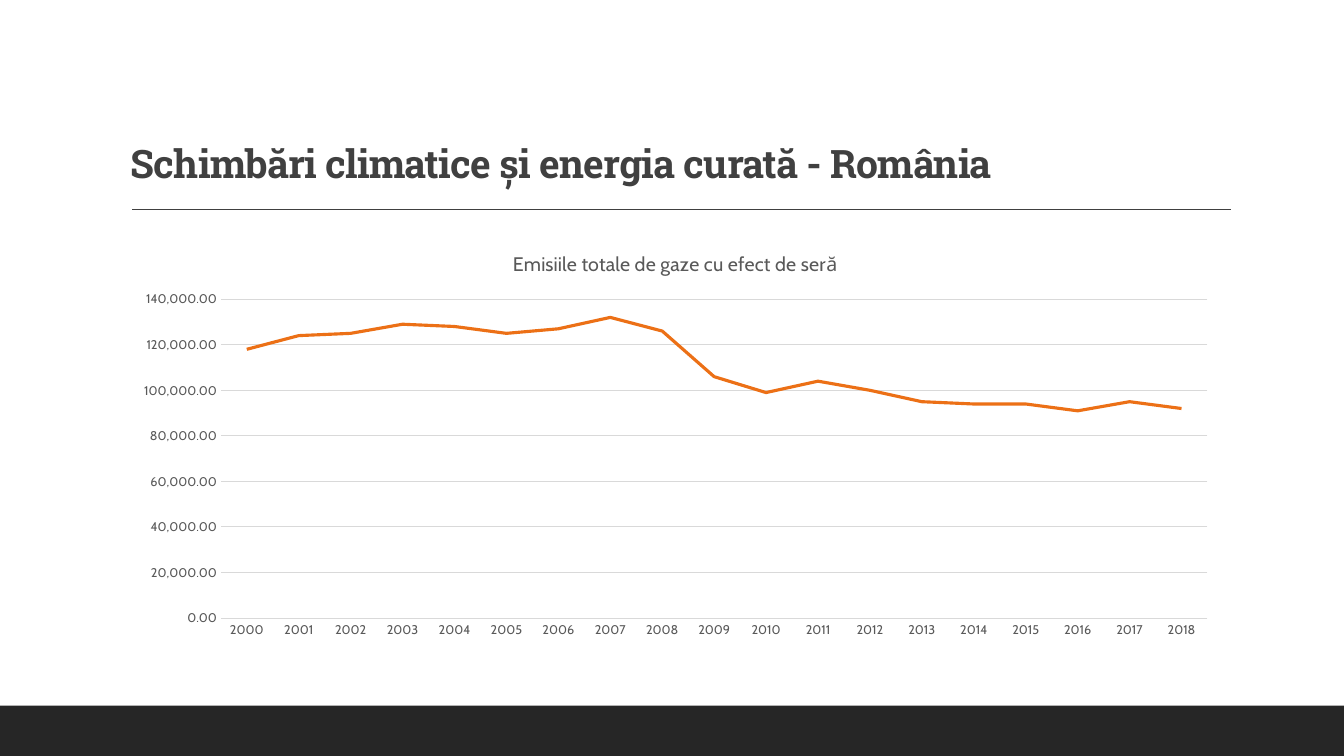
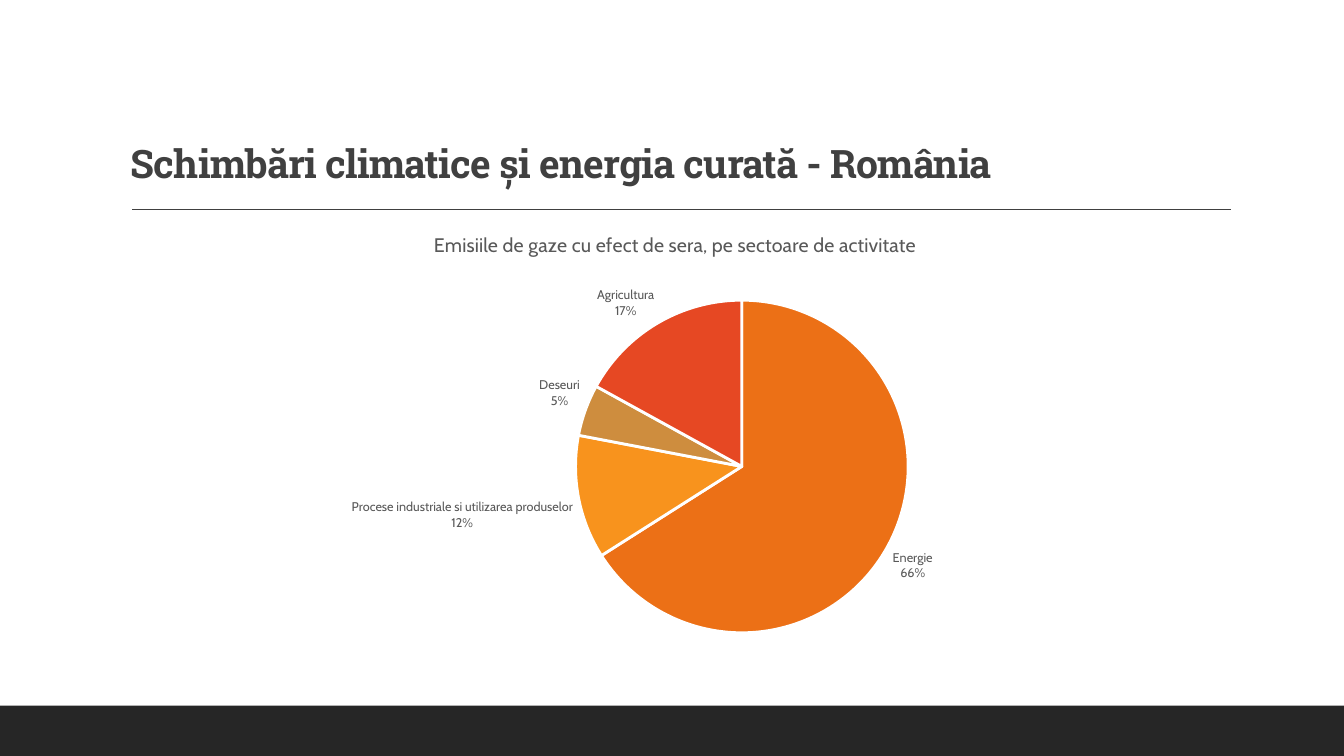
"""Build two slides on greenhouse gas emissions in Romania."""
from lxml import etree
from pptx import Presentation
from pptx.chart.data import CategoryChartData
from pptx.dml.color import RGBColor
from pptx.enum.chart import XL_CHART_TYPE, XL_LABEL_POSITION, XL_TICK_MARK
from pptx.enum.shapes import MSO_CONNECTOR, MSO_SHAPE
from pptx.enum.text import MSO_ANCHOR
from pptx.oxml.ns import qn
from pptx.util import Cm, Pt

LINE = XL_CHART_TYPE.LINE
PIE = XL_CHART_TYPE.PIE
OUTSIDE_END = XL_LABEL_POSITION.OUTSIDE_END
NO_TICK = XL_TICK_MARK.NONE
STRAIGHT = MSO_CONNECTOR.STRAIGHT
RECTANGLE = MSO_SHAPE.RECTANGLE
BOTTOM = MSO_ANCHOR.BOTTOM

BAND = RGBColor(0x26, 0x26, 0x26)
HEADING = RGBColor(0x40, 0x40, 0x40)
LABEL = RGBColor(0x59, 0x59, 0x59)
GRID = RGBColor(0xD9, 0xD9, 0xD9)
WHITE = RGBColor(0xFF, 0xFF, 0xFF)
ORANGE = RGBColor(0xEC, 0x70, 0x16)
AMBER = RGBColor(0xF8, 0x93, 0x1D)
BROWN = RGBColor(0xCE, 0x8D, 0x3E)
RED = RGBColor(0xE6, 0x48, 0x23)

HEADING_FONT = "Roboto Slab"
BODY_FONT = "Cabin"
TITLE = "Schimbări climatice și energia curată - România"
LEFT, WIDTH = Cm(3.05), Cm(27.94)

presentation = Presentation()
presentation.slide_width = Cm(33.87)
presentation.slide_height = Cm(19.05)


def add_titled_slide():
    """Add a slide with the shared band, rule and title."""
    slide = presentation.slides.add_slide(presentation.slide_layouts[6])

    band = slide.shapes.add_shape(RECTANGLE, 0, Cm(17.78), presentation.slide_width, Cm(1.27))
    band.shadow.inherit = False
    band.fill.solid()
    band.fill.fore_color.rgb = BAND
    band.line.fill.background()

    rule = slide.shapes.add_connector(STRAIGHT, Cm(3.33), Cm(5.28), Cm(31.01), Cm(5.28))
    rule.line.color.rgb = HEADING
    rule.line.width = Pt(1)
    etree.SubElement(rule._element.spPr, qn("a:effectLst"))

    title = slide.shapes.add_textbox(LEFT, Cm(0.79), WIDTH, Cm(4.04))
    title.text_frame.word_wrap = True
    title.text_frame.vertical_anchor = BOTTOM
    title.text_frame.text = TITLE
    paragraph = title.text_frame.paragraphs[0]
    paragraph.line_spacing = 0.9
    run = paragraph.runs[0]
    run.font.name = HEADING_FONT
    run.font.size = Pt(28)
    run.font.bold = True
    run.font.color.rgb = HEADING
    run._r.get_or_add_rPr().set("spc", "-50")
    return slide


def add_titled_chart(slide, kind, top, height, heading, values, plot_box):
    """Add a chart with a heading and a plot area given as shares of the chart."""
    chart_data = CategoryChartData(number_format="#,##0.00")
    chart_data.categories = list(values)
    chart_data.add_series("Series 1", list(values.values()))
    chart = slide.shapes.add_chart(kind, LEFT, top, WIDTH, height, chart_data).chart
    chart.has_legend = False
    chart.font.name = BODY_FONT
    chart.font.size = Pt(9)
    chart.font.color.rgb = LABEL

    chart.has_title = True
    chart.chart_title.include_in_layout = False
    chart.chart_title.text_frame.text = heading
    font = chart.chart_title.text_frame.paragraphs[0].runs[0].font
    font.name = BODY_FONT
    font.size = Pt(14)
    font.bold = False
    font.color.rgb = LABEL

    plot_area = chart._chartSpace.chart.plotArea
    for old_layout in plot_area.findall(qn("c:layout")):
        plot_area.remove(old_layout)
    layout = etree.Element(qn("c:layout"))
    plot_area.insert(0, layout)
    manual = etree.SubElement(layout, qn("c:manualLayout"))
    settings = [("layoutTarget", "inner"), ("xMode", "edge"), ("yMode", "edge")]
    for name, value in settings + list(zip("xywh", plot_box)):
        etree.SubElement(manual, qn(f"c:{name}")).set("val", str(value))
    return chart


thousands = [118, 124, 125, 129, 128, 125, 127, 132, 126, 106,
             99, 104, 100, 95, 94, 94, 91, 95, 92]
emissions = {str(year): value * 1000 for year, value in enumerate(thousands, 2000)}
line_chart = add_titled_chart(
    add_titled_slide(), LINE, Cm(5.87), Cm(10.44),
    "Emisiile totale de gaze cu efect de seră", emissions, (0.09, 0.16, 0.89, 0.77))
line_chart.plots[0].vary_by_categories = False
line_series = line_chart.plots[0].series[0]
line_series.smooth = False
line_series.format.line.color.rgb = ORANGE
line_series.format.line.width = Pt(2.25)

year_axis, value_axis = line_chart.category_axis, line_chart.value_axis
for axis in (year_axis, value_axis):
    axis.major_tick_mark = NO_TICK
    axis.minor_tick_mark = NO_TICK
value_axis.minimum_scale = 0
value_axis.maximum_scale = 140000
value_axis.major_unit = 20000
value_axis.tick_labels.number_format = "#,##0.00"
value_axis.tick_labels.number_format_is_linked = False
value_axis.format.line.fill.background()
for line in (year_axis.format.line, value_axis.major_gridlines.format.line):
    line.color.rgb = GRID
    line.width = Pt(0.75)

sectors = {"Energie": 66, "Procese industriale si utilizarea produselor": 12,
           "Deseuri": 5, "Agricultura": 17}
pie_chart = add_titled_chart(
    add_titled_slide(), PIE, Cm(5.38), Cm(10.9),
    "Emisiile de gaze cu efect de sera, pe sectoare de activitate", sectors,
    (0.41, 0.2, 0.3, 0.77))
pie_chart.plots[0].vary_by_categories = True
pie_series = pie_chart.plots[0].series[0]
for index, color in enumerate((ORANGE, AMBER, BROWN, RED)):
    point = pie_series.points[index]
    point.format.fill.solid()
    point.format.fill.fore_color.rgb = color
    point.format.line.color.rgb = WHITE
    point.format.line.width = Pt(2)

labels = pie_series.data_labels
labels.show_value = False
labels.show_category_name = True
labels.show_percentage = True
labels.number_format = "0%"
labels.number_format_is_linked = False
labels.position = OUTSIDE_END
labels.font.name = BODY_FONT
labels.font.size = Pt(9)
labels.font.color.rgb = LABEL
separator = etree.Element(qn("c:separator"))
separator.text = "\n"
labels._element.find(qn("c:showBubbleSize")).addnext(separator)

presentation.save("out.pptx")
